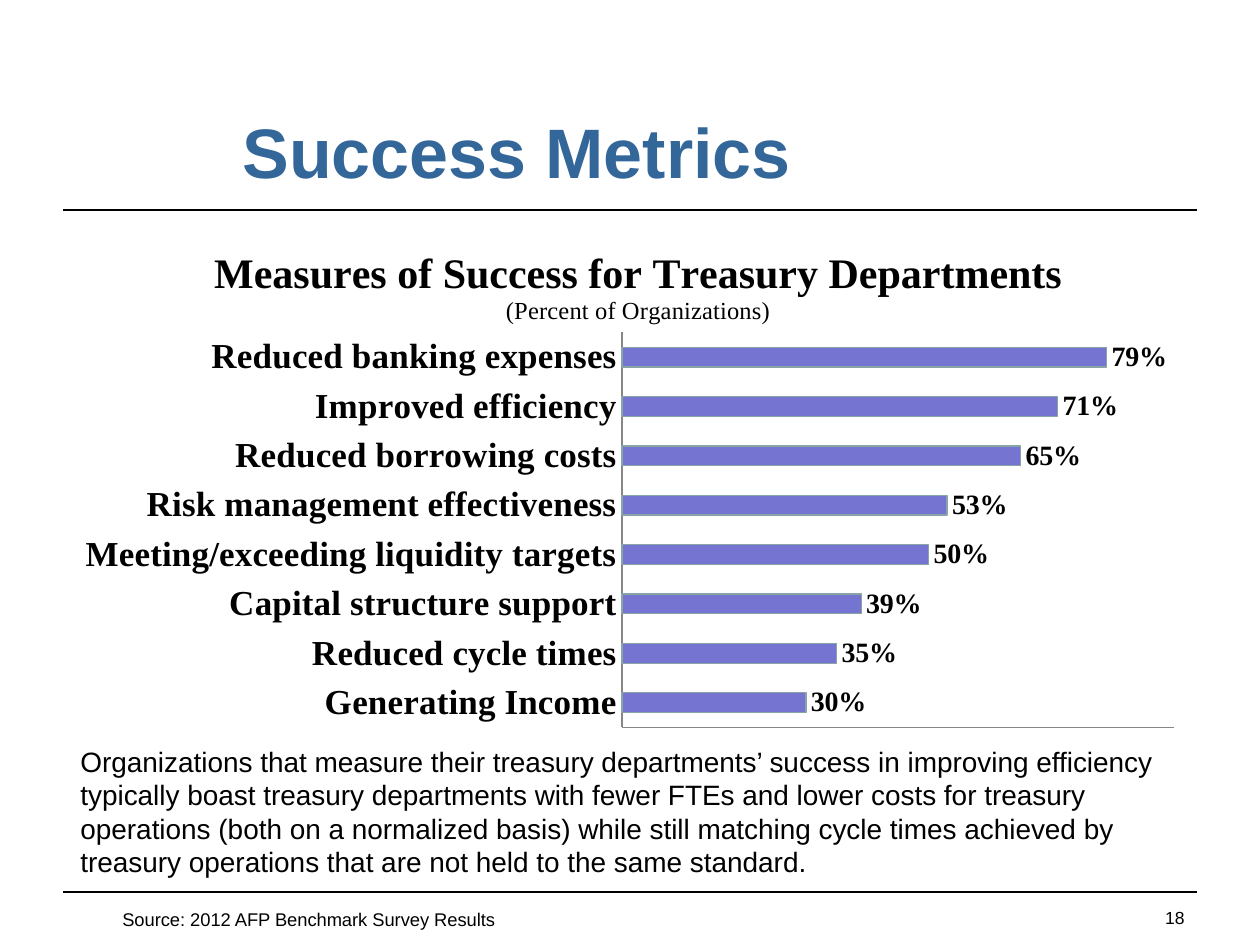
from pptx import Presentation, util as u
from pptx.chart.data import CategoryChartData
from pptx.dml.color import RGBColor
from pptx.enum import chart as ch, shapes, text
from pptx.oxml import parse_xml
from pptx.oxml.ns import nsdecls, qn

PX = 914400 / 126
THEME = dict(
    ink="000000", title="336699", bar="7575D1", edge="89A4A7", axis="868686",
    sans="Arial", serif="Times New Roman",
    title_pt=40, chart_title_pt=24, subtitle_pt=14, category_pt=20,
    label_pt=16, body_pt=16, source_pt=10.5, number_pt=10,
)


def style(font, face, size, color="ink", bold=False):
    font.name, font.size, font.bold = THEME[face], u.Pt(THEME[size]), bold
    font.color.rgb = RGBColor.from_string(THEME[color])


def set_layout(parent, index, **fractions):
    """Place a chart part by fractions of the chart's size."""
    old = parent.find(qn("c:layout"))
    if old is not None:
        index = parent.index(old)
        parent.remove(old)
    target = '<c:layoutTarget val="inner"/>' if "w" in fractions else ""
    modes = "".join(f'<c:{k}Mode val="edge"/>' for k in "xy")
    values = "".join(f'<c:{k} val="{v}"/>' for k, v in fractions.items())
    parent.insert(index, parse_xml(
        f'<c:layout {nsdecls("c")}><c:manualLayout>{target}{modes}{values}'
        "</c:manualLayout></c:layout>"))


prs = Presentation()
prs.slide_width, prs.slide_height = u.Inches(10), u.Inches(7.5)
s = prs.slides.add_slide(prs.slide_layouts[5])

# Rules above and below the content
for y in (210, 892):
    line = s.shapes.add_connector(
        shapes.MSO_CONNECTOR.STRAIGHT, *(round(v * PX) for v in (63, y, 1197, y)))
    line.line.color.rgb = RGBColor.from_string(THEME["ink"])
    line.line.width = u.Pt(1)
    line._element.spPr.append(parse_xml(f'<a:effectLst {nsdecls("a")}/>'))

# Title
title = s.shapes.title
title.left, title.top, title.width, title.height = (
    round(v * PX) for v in (63, 102, 907, 98))
tf = title.text_frame
tf.vertical_anchor = text.MSO_ANCHOR.MIDDLE
p = tf.paragraphs[0]
p.alignment = text.PP_ALIGN.CENTER
r = p.add_run()
r.text = "Success Metrics"
style(r.font, "sans", "title_pt", "title", True)

# Bar chart of success measures
measures = [
    ("Generating Income", 0.30),
    ("Reduced cycle times", 0.35),
    ("Capital structure support", 0.39),
    ("Meeting/exceeding liquidity targets", 0.50),
    ("Risk management effectiveness", 0.53),
    ("Reduced borrowing costs", 0.65),
    ("Improved efficiency", 0.71),
    ("Reduced banking expenses", 0.79),
]
data = CategoryChartData(number_format="0%")
data.categories = [name for name, share in measures]
data.add_series("Series 1", [share for name, share in measures])
chart = s.shapes.add_chart(
    ch.XL_CHART_TYPE.BAR_CLUSTERED,
    *(round(v * PX) for v in (63, 218, 1134, 520)), data).chart
chart.has_legend = False
style(chart.font, "sans", "number_pt")

# Chart title
chart.has_title = True
tf = chart.chart_title.text_frame
for i, (words, size, bold) in enumerate([
        ("Measures of Success for Treasury Departments", "chart_title_pt", True),
        ("(Percent of Organizations)", "subtitle_pt", False)]):
    p = tf.add_paragraph() if i else tf.paragraphs[0]
    r = p.add_run()
    r.text = words
    style(r.font, "serif", size, bold=bold)
chart.chart_title.include_in_layout = False
set_layout(chart.chart_title._element, 1, x=0.13, y=0.05)
set_layout(chart._chartSpace.chart.plotArea, 0, x=0.493, y=0.22, w=0.487, h=0.76)

# Axes
cat, val = chart.category_axis, chart.value_axis
for axis in (cat, val):
    axis.has_major_gridlines = False
    axis.major_tick_mark = axis.minor_tick_mark = ch.XL_TICK_MARK.NONE
    axis.format.line.color.rgb = RGBColor.from_string(THEME["axis"])
    axis.format.line.width = u.Pt(0.75)
style(cat.tick_labels.font, "serif", "category_pt", bold=True)
val.minimum_scale, val.maximum_scale = 0, 0.9
val.tick_label_position = ch.XL_TICK_LABEL_POSITION.NONE

# Bars and their labels
plot = chart.plots[0]
plot.gap_width = 150
plot.vary_by_categories = False
bars = plot.series[0]
bars.format.fill.solid()
bars.format.fill.fore_color.rgb = RGBColor.from_string(THEME["bar"])
bars.format.line.color.rgb = RGBColor.from_string(THEME["edge"])
bars.format.line.width = u.Pt(0.75)
labels = bars.data_labels
labels.show_value = True
labels.number_format, labels.number_format_is_linked = "0%", False
labels.position = ch.XL_LABEL_POSITION.OUTSIDE_END
style(labels.font, "serif", "label_pt", bold=True)

# Commentary, source and slide number
for box, words, size, align in [
        ((68, 738, 1134, 149),
         "Organizations that measure their treasury departments’ success in "
         "improving efficiency typically boast treasury departments with fewer "
         "FTEs and lower costs for treasury operations (both on a normalized "
         "basis) while still matching cycle times achieved by treasury "
         "operations that are not held to the same standard.",
         "body_pt", text.PP_ALIGN.LEFT),
        ((110, 902, 745, 35), "Source: 2012 AFP Benchmark Survey Results",
         "source_pt", text.PP_ALIGN.LEFT),
        ((1134, 901, 63, 44), "18", "number_pt", text.PP_ALIGN.RIGHT)]:
    tf = s.shapes.add_textbox(*(round(v * PX) for v in box)).text_frame
    tf.word_wrap = True
    p = tf.paragraphs[0]
    p.alignment = align
    r = p.add_run()
    r.text = words
    style(r.font, "sans", size)

prs.save("out.pptx")
